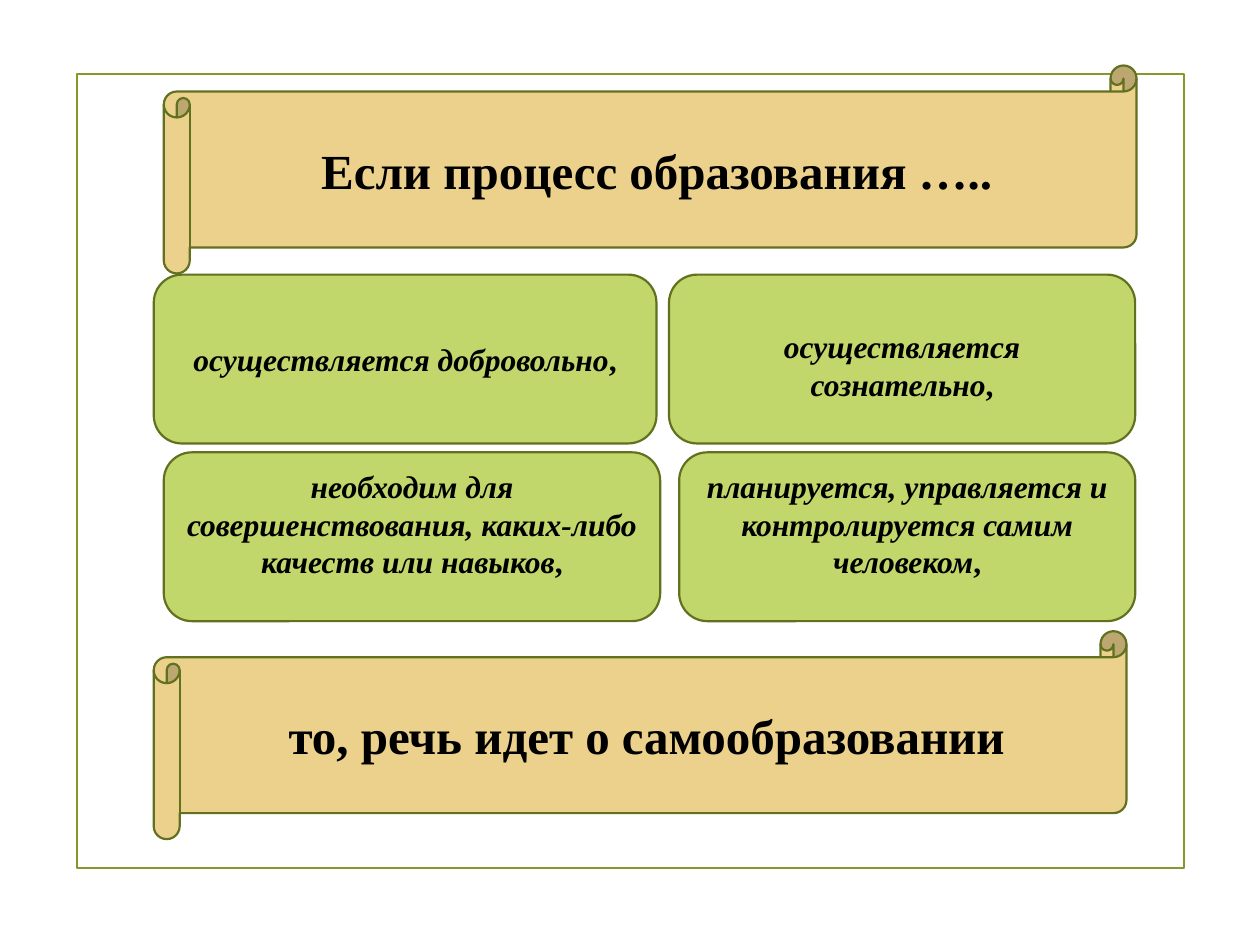
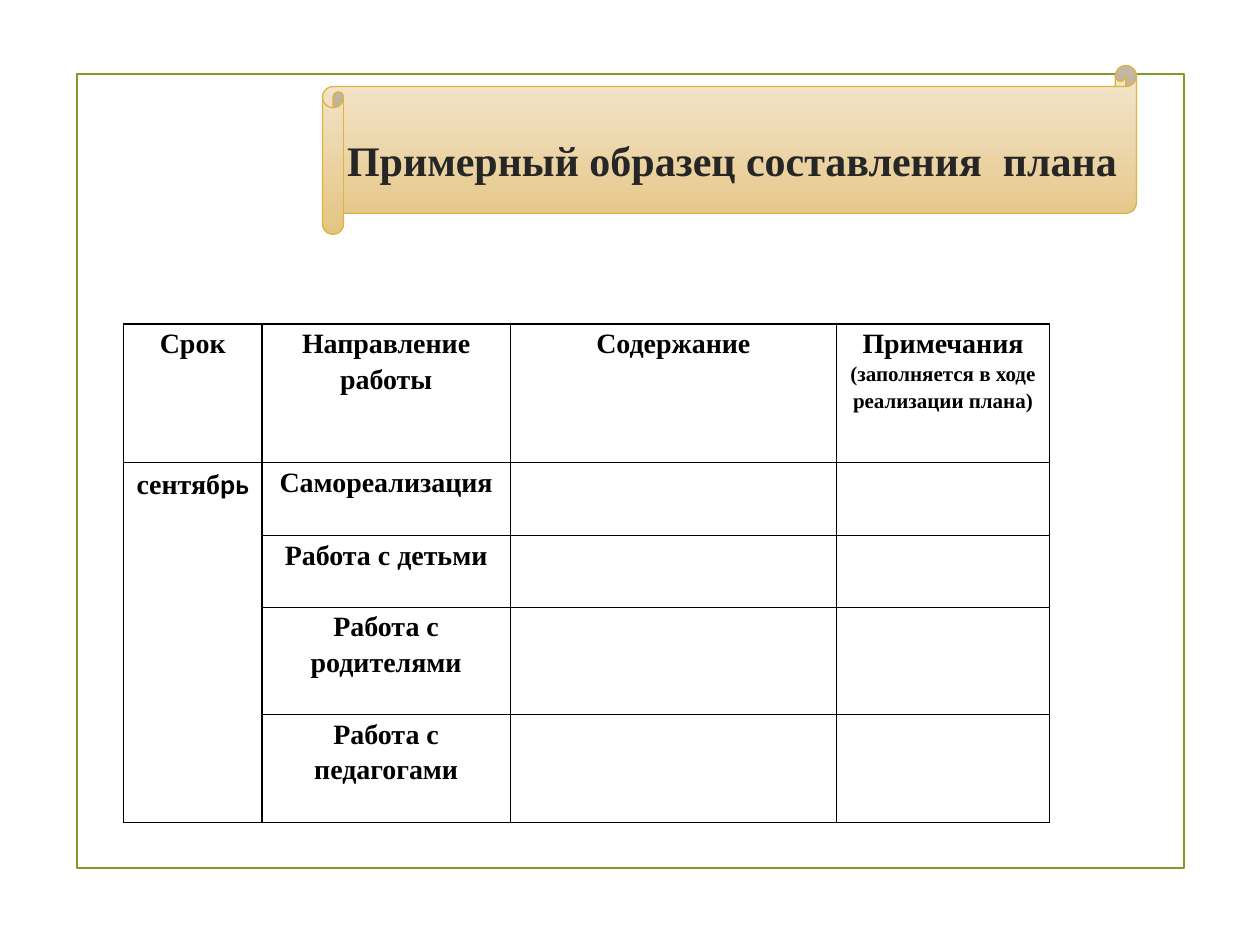
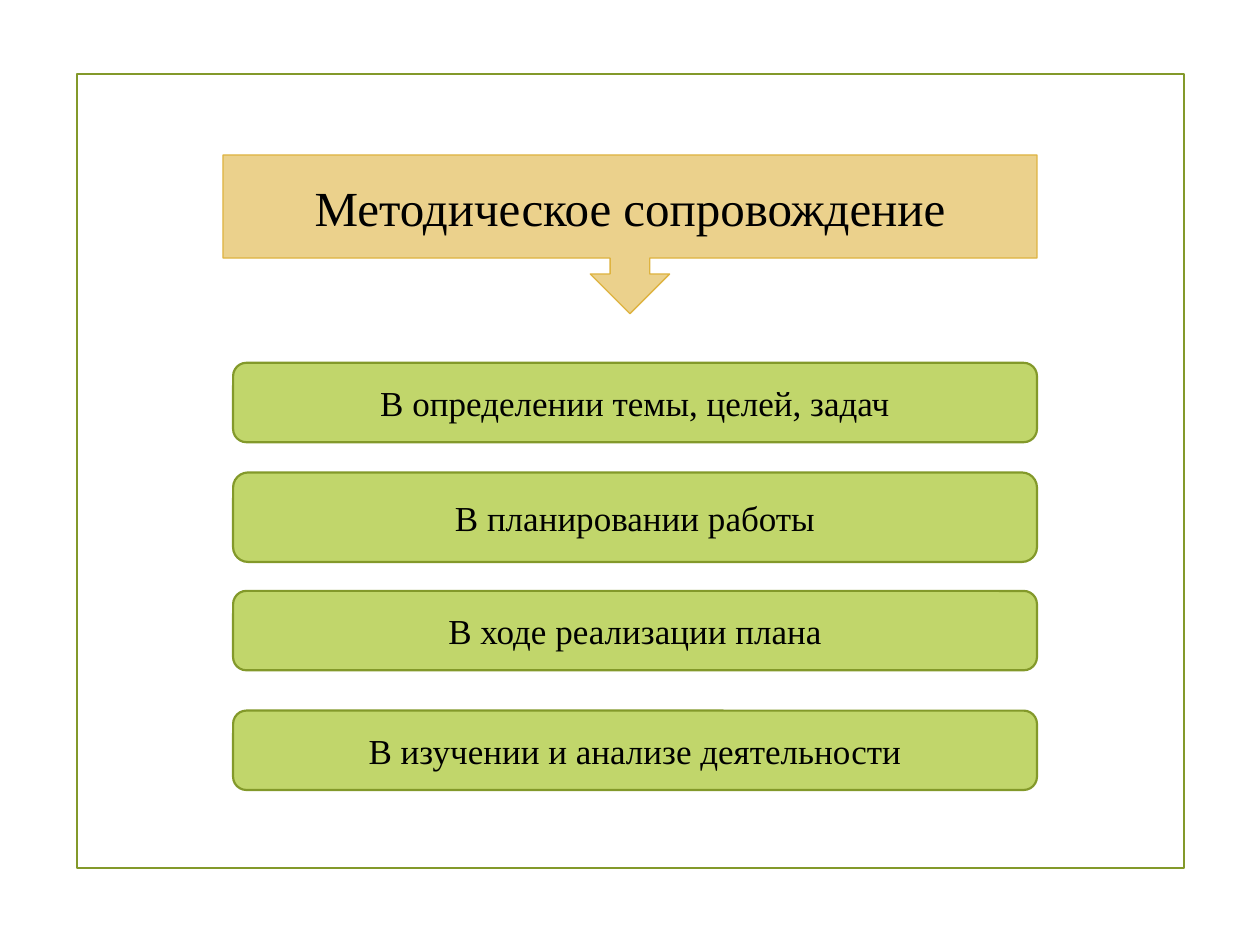
"""Builds three slides about self-education on a grid of 100 columns by 75 rows."""
from lxml import etree
from pptx import Presentation
from pptx import util as u
from pptx.dml.color import RGBColor
from pptx.enum import shapes, text
from pptx.oxml.ns import qn

GRID = u.Inches(0.1)
FONT = "Times New Roman"
COLORS = {
    "frame": "83992A", "dark_green": "61711F", "green": "C1D66B",
    "sand": "EBD18C", "gold": "DEB340", "sand_light": "F4E7D1",
    "sand_dark": "E4C482", "black": "000000", "title": "262626",
}
KIND = shapes.MSO_SHAPE
ANCHOR = text.MSO_ANCHOR


def color(name):
    return RGBColor.from_string(COLORS[name])


def cells(*counts):
    return [round(count * GRID) for count in counts]


def style(paragraph, size, bold=False, italic=None, ink="black"):
    paragraph.alignment = text.PP_ALIGN.CENTER
    font = paragraph.font
    font.name, font.size, font.bold, font.italic = FONT, u.Pt(size), bold, italic
    font.color.rgb = color(ink)


def add_figure(slide, kind, place, fill, line, width=1.25):
    shape = slide.shapes.add_shape(kind, *cells(*place))
    shape.shadow.inherit = False
    if fill is None:
        shape.fill.background()
    else:
        shape.fill.solid()
        shape.fill.fore_color.rgb = color(fill)
    shape.line.color.rgb = color(line)
    shape.line.width = u.Pt(width)
    return shape


def add_label(shape, words, size, bold=False):
    frame = shape.text_frame
    frame.word_wrap = True
    frame.vertical_anchor = ANCHOR.MIDDLE
    paragraph = frame.paragraphs[0]
    paragraph.text = words
    style(paragraph, size, bold)


def add_framed_slide(presentation):
    slide = presentation.slides.add_slide(presentation.slide_layouts[6])
    add_figure(slide, KIND.RECTANGLE, (6.1, 5.9, 87.9, 63), None, "frame")
    return slide


def add_scroll(slide, left, top, words):
    scroll = add_figure(slide, KIND.HORIZONTAL_SCROLL, (left, top, 77.2, 16.5),
                        "sand", "dark_green")
    add_label(scroll, words, 28, bold=True)


def add_condition(slide, left, top, width, words, anchor=ANCHOR.TOP, inset=0.5):
    box = add_figure(slide, KIND.ROUNDED_RECTANGLE, (left, top, width, 13.4),
                     "green", "dark_green")
    frame = box.text_frame
    frame.word_wrap = True
    frame.vertical_anchor = anchor
    frame.margin_top = cells(inset)[0]
    paragraph = frame.paragraphs[0]
    style(paragraph, 18, bold=True)
    for words_part, italic in ((words, True), (",", False)):
        run = paragraph.add_run()
        run.text = words_part
        run.font.italic = italic


def add_borders(cell):
    properties = cell._tc.get_or_add_tcPr()
    for side in ("lnL", "lnR", "lnT", "lnB"):
        line = etree.SubElement(properties, qn(f"a:{side}"), w=str(u.Pt(1)))
        fill = etree.SubElement(line, qn("a:solidFill"))
        etree.SubElement(fill, qn("a:srgbClr"), val=COLORS["black"])


def add_plan_table(slide, place, widths, heights, rows):
    table = slide.shapes.add_table(len(heights), len(widths), *cells(*place)).table
    table.first_row = table.horz_banding = False
    for column, width in zip(table.columns, cells(*widths)):
        column.width = width
    for row, height in zip(table.rows, cells(*heights)):
        row.height = height
    for cell in table.iter_cells():
        add_borders(cell)
        cell.fill.background()
        cell.margin_left = cell.margin_right = cells(0.7)[0]
        cell.margin_top = cell.margin_bottom = 0
    for row_index, row in enumerate(rows):
        for column_index, words in enumerate(row):
            cell = table.cell(row_index, column_index)
            cell.text = words
            for paragraph, size in zip(cell.text_frame.paragraphs, (16, 12)):
                style(paragraph, size, bold=True)
                paragraph.line_spacing = 1.15
    return table


def build_conditions(presentation):
    slide = add_framed_slide(presentation)
    add_scroll(slide, 13, 5.2, "Если процесс образования …..")
    add_condition(slide, 12.2, 21.8, 39.9, "осуществляется добровольно", ANCHOR.MIDDLE)
    add_condition(slide, 53.1, 21.8, 37, "осуществляется сознательно", inset=3.5)
    add_condition(slide, 53.9, 35.9, 36.2,
                  "планируется, управляется и контролируется самим человеком")
    add_condition(slide, 13, 35.9, 39.4,
                  "необходим для совершенствования, каких-либо качеств или навыков")
    add_scroll(slide, 12.2, 50.1, "то, речь идет о самообразовании")


def build_plan(presentation):
    slide = add_framed_slide(presentation)
    scroll = add_figure(slide, KIND.HORIZONTAL_SCROLL, (25.6, 5.2, 64.6, 13.4),
                        "sand", "gold", 0.75)
    scroll.fill.gradient()
    scroll.fill.gradient_angle = 270
    for stop, name in zip(scroll.fill.gradient_stops, ("sand_light", "sand_dark")):
        stop.color.rgb = color(name)

    title = slide.shapes.add_textbox(*cells(25.6, 7.7, 65, 10)).text_frame
    title.word_wrap = True
    title.vertical_anchor = ANCHOR.MIDDLE
    title.paragraphs[0].text = "Примерный образец составления  плана"
    style(title.paragraphs[0], 24, bold=True, ink="title")

    table = add_plan_table(
        slide, (9.8, 25.7, 73.5, 39.6),
        (11, 19.7, 25.9, 16.9), (11, 5.8, 5.7, 8.5, 8.6),
        [("Срок", "Направление работы", "Содержание",
          "Примечания\n(заполняется в ходе реализации плана)"),
         ("сентяб", "Самореализация"),
         ("", "Работа с детьми"),
         ("", "Работа с родителями"),
         ("", "Работа с педагогами")])
    month = table.cell(1, 0)
    month.merge(table.cell(4, 0))
    ending = month.text_frame.paragraphs[0].add_run()
    ending.text = "рь"
    ending.font.name = "Calibri"


def build_support(presentation):
    slide = add_framed_slide(presentation)
    callout = add_figure(slide, KIND.DOWN_ARROW_CALLOUT, (17.7, 12.3, 64.6, 12.6),
                         "sand", "gold", 0.75)
    add_label(callout, "Методическое сопровождение", 28)
    stages = [(28.8, 6.3, "В определении темы, целей, задач"),
              (37.5, 7.1, "В планировании работы"),
              (46.9, 6.3, "В ходе реализации плана"),
              (56.4, 6.3, "В изучении и анализе деятельности")]
    for top, height, words in stages:
        stage = add_figure(slide, KIND.ROUNDED_RECTANGLE, (18.5, top, 63.8, height),
                           "green", "frame")
        add_label(stage, words, 20)


def main():
    presentation = Presentation()
    presentation.slide_width, presentation.slide_height = cells(100, 75)
    build_conditions(presentation)
    build_plan(presentation)
    build_support(presentation)
    presentation.save("out.pptx")


if __name__ == "__main__":
    main()
